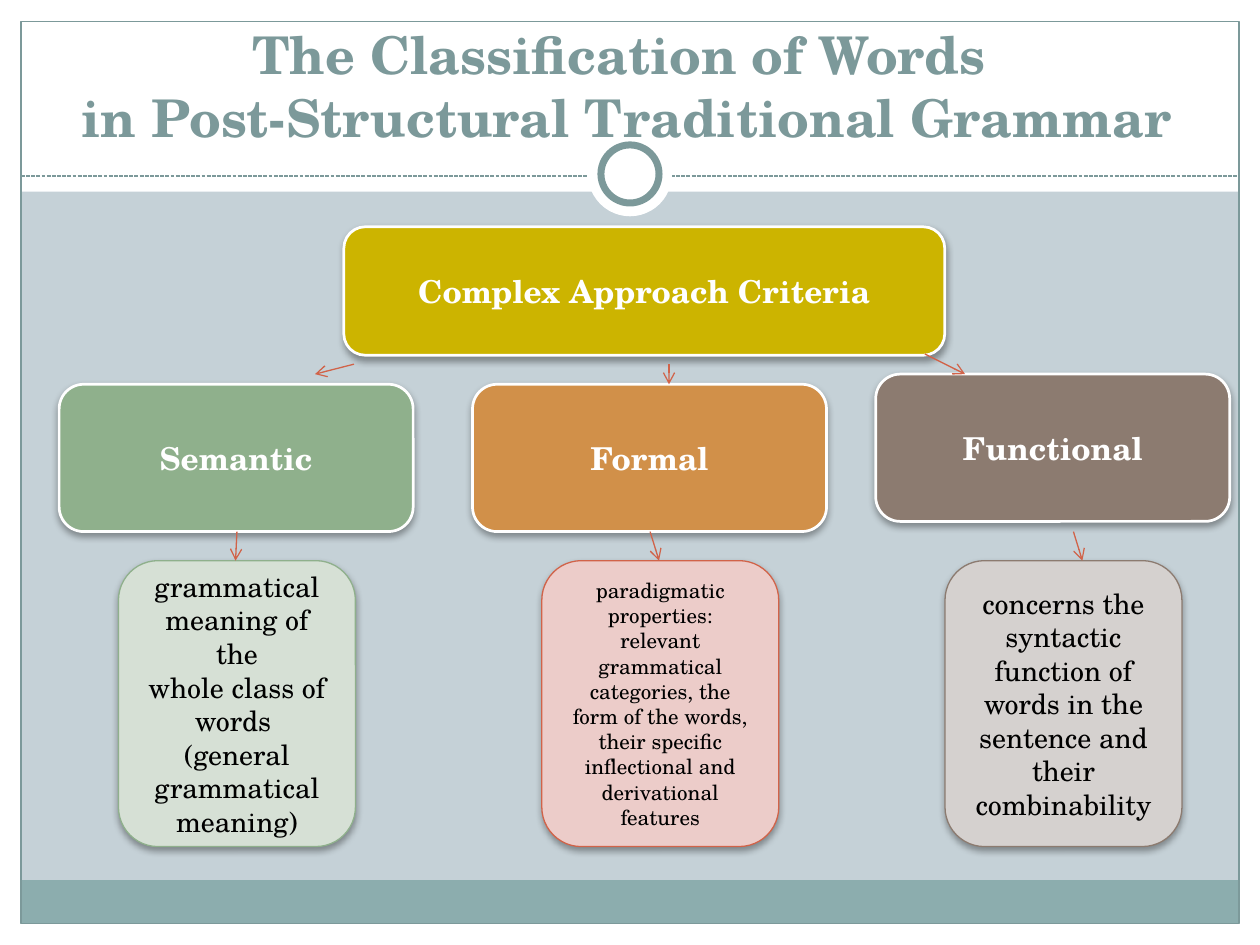
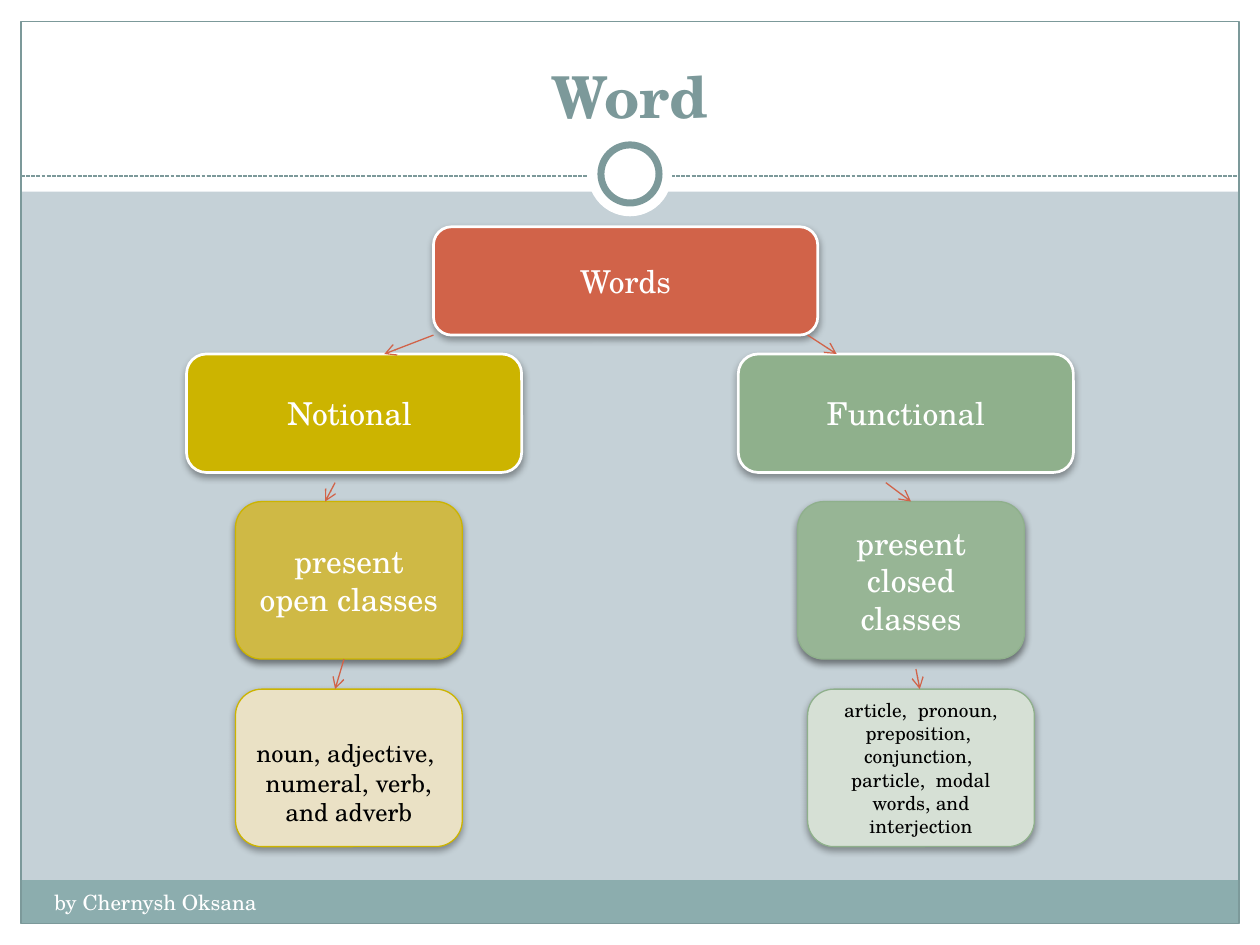
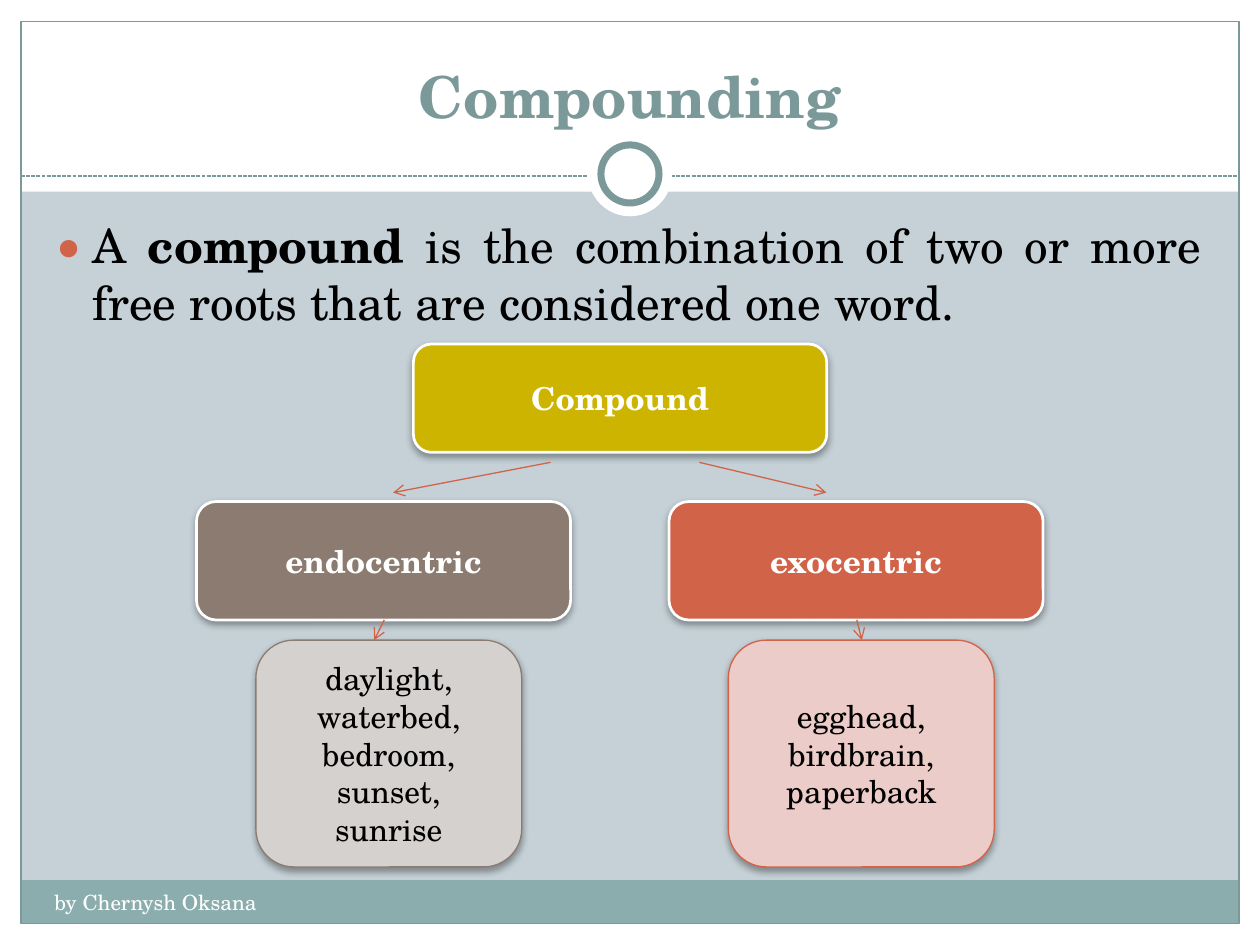
"""Build three slides that classify words and compounds in tree diagrams."""
import lxml.etree
import pptx
import pptx.dml.color
import pptx.enum.dml
import pptx.enum.shapes
import pptx.enum.text
import pptx.oxml.ns
import pptx.util

Pt = pptx.util.Pt
qn = pptx.oxml.ns.qn
SubElement = lxml.etree.SubElement
SHAPE = pptx.enum.shapes.MSO_SHAPE
ALIGN = pptx.enum.text.PP_ALIGN
ANCHOR = pptx.enum.text.MSO_ANCHOR

FONT = "TeX Gyre Schola"
WHITE, BLACK = "FFFFFF", "000000"
TEAL, FOOTER_TEAL, BACKGROUND, ACCENT = "7C999A", "8CADAE", "C5D1D7", "D16349"
FILLS = {
    "heading": {"gold": "CCB400", "green": "8FB08C", "orange": "D19049",
                "brown": "8C7B70", "red": ACCENT},
    "class": {"gold": "CFB945", "green": "97B595"},
    "note": {"gold": "EAE1C5", "green": "D6E0D5", "brown": "D5D1CF", "red": "ECCCC9"},
}

SLIDES = [
    {
        "title": "The Classification of Words \vin Post-Structural Traditional Grammar",
        "title_place": (22.3, 28.1), "title_size": 29.7, "bold_headings": True,
        "tiers": [
            ("heading", 129.6, 343.4, 73.4, [
                (196.5, "gold", 18, "Complex Approach Criteria")]),
            ("heading", 219.6, 202.3, 84.2, [
                (33.8, "green", 18, "Semantic"),
                (270, "orange", 18, "Formal")]),
            ("heading", 213.8, 202.3, 84.2, [
                (500.4, "brown", 18, "Functional")]),
            ("note", 320.4, 135.4, 163.4, [
                (67.7, "green", 16, "grammatical meaning of the\nwhole class of words \n"
                                    "(general grammatical meaning)"),
                (309.6, "red", 12, "paradigmatic properties: relevant grammatical categories, "
                                   "the form of the words,\n"
                                   "their specific inflectional and derivational features"),
                (540, "brown", 16, "concerns the syntactic function of words in the sentence "
                                   "and their combinability")]),
        ],
        "arrows": [(202.3, 208.1, 180, 213.8), (528.5, 202.3, 551.5, 213.8),
                   (382.3, 208.1, 382.3, 219.6), (135.4, 303.8, 134.6, 320.4),
                   (371.5, 303.8, 376.6, 320.4), (613.4, 303.8, 618.5, 320.4)],
    },
    {
        "title": "Word", "title_place": (24, 18), "title_size": 33, "bold_headings": False,
        "footer": "by Chernysh Oksana",
        "tiers": [
            ("heading", 129.6, 219.6, 61.9, [(247.7, "red", 18, "Words")]),
            ("heading", 202.3, 191.5, 67.7, [
                (106.6, "gold", 18, "Notional "),
                (421.9, "green", 18, "Functional")]),
            ("class", 286.6, 129.6, 90, [
                (134.6, "gold", 18, "present\nopen classes"),
                (455.8, "green", 18, "present closed classes")]),
            ("note", 393.8, 129.6, 90, [
                (461.5, "green", 11, "article,  pronoun, preposition,  conjunction, \n"
                                     "particle,  modal words, and interjection"),
                (134.6, "gold", 14, "noun, adjective,  numeral, verb, and adverb")]),
        ],
        "arrows": [(247.7, 191.5, 219.6, 202.3), (461.5, 191.5, 478.1, 202.3),
                   (191.5, 275.8, 185.8, 286.6), (506.2, 275.8, 520.6, 286.6),
                   (196.6, 376.6, 191.5, 393.8), (523.4, 382.3, 525.6, 393.8)],
    },
    {
        "title": "Compounding", "title_place": (24, 18), "title_size": 33, "bold_headings": True,
        "footer": "by Chernysh Oksana",
        "definition": ["A ", "compound",
                       " is the combination of two or more free roots that are considered one word."],
        "tiers": [
            ("heading", 196.6, 236.2, 61.9, [(236.2, "gold", 18, "Compound")]),
            ("heading", 286.6, 213.8, 67.7, [
                (112.3, "brown", 18, "endocentric"),
                (382.3, "red", 18, "exocentric")]),
            ("note", 365.8, 151.9, 129.6, [
                (146.2, "brown", 18, "daylight, waterbed, bedroom, sunset, sunrise"),
                (416.2, "red", 18, "egghead, birdbrain, paperback")]),
        ],
        "arrows": [(314.6, 264.2, 224.6, 281.5), (399.6, 264.2, 472.3, 281.5),
                   (219.6, 354.2, 213.8, 365.8), (489.6, 354.2, 492.5, 365.8)],
    },
]


def paint(fill, color):
    """Make a fill of a shape, line or font solid in a hex colour."""
    fill.solid()
    fill.fore_color.rgb = pptx.dml.color.RGBColor.from_string(color)


def add_line(slide, ends, color):
    """Add a thin straight connector without a shadow."""
    connector = slide.shapes.add_connector(
        pptx.enum.shapes.MSO_CONNECTOR.STRAIGHT, *[Pt(value) for value in ends])
    paint(connector.line.fill, color)
    connector.line.width = Pt(0.75)
    SubElement(connector._element.spPr, qn("a:effectLst"))
    return connector


presentation = pptx.Presentation()
presentation.slide_width, presentation.slide_height = Pt(720), Pt(540)
master = presentation.slide_master
paint(master.background.fill, BACKGROUND)
title_only, title_and_content = presentation.slide_layouts[5], presentation.slide_layouts[1]

for number, content in enumerate(SLIDES):
    layout = title_and_content if "definition" in content else title_only
    slide = presentation.slides.add_slide(layout)

    if number == 0:
        decorations = []
        for kind, left, top, width, height, fill, line_width in [
            (SHAPE.RECTANGLE, 0, 528, 720, 12, WHITE, 0),
            (SHAPE.RECTANGLE, 0, 0, 720, 109.5, WHITE, 0),
            (SHAPE.RECTANGLE, 0, 0, 12, 540, WHITE, 0),
            (SHAPE.RECTANGLE, 708, 0, 12, 540, WHITE, 0),
            (SHAPE.RECTANGLE, 11.7, 503, 696, 24.5, FOOTER_TEAL, 0),
            (SHAPE.RECTANGLE, 12, 12.2, 696, 515.5, None, 0.75),
            (None, 12, 100.6, 708, 100.6, TEAL, 0.75),
            (SHAPE.OVAL, 336, 75.6, 48, 48, WHITE, 0),
            (SHAPE.OVAL, 343.4, 82.8, 33.2, 33.2, WHITE, 4),
        ]:
            if kind is None:
                shape = add_line(slide, (left, top, width, height), fill)
                shape.line.dash_style = pptx.enum.dml.MSO_LINE.SQUARE_DOT
            else:
                shape = slide.shapes.add_shape(kind, Pt(left), Pt(top), Pt(width), Pt(height))
                shape.shadow.inherit = False
                if fill:
                    paint(shape.fill, fill)
                else:
                    shape.fill.background()
                if line_width:
                    paint(shape.line.fill, TEAL)
                    shape.line.width = Pt(line_width)
                else:
                    shape.line.fill.background()
            decorations.append(shape)
        for shape in decorations:
            master.shapes._spTree.append(shape._element)

    title = slide.shapes.title
    title.left, title.top = [Pt(value) for value in content["title_place"]]
    title.width, title.height = Pt(672), Pt(59.8)
    title.text_frame.text = content["title"]
    title.text_frame.auto_size = pptx.enum.text.MSO_AUTO_SIZE.NONE
    title.text_frame.vertical_anchor = ANCHOR.BOTTOM
    paragraph = title.text_frame.paragraphs[0]
    paragraph.alignment = ALIGN.CENTER
    for run in paragraph.runs:
        run.font.name, run.font.size, run.font.bold = FONT, Pt(content["title_size"]), True
        paint(run.font.fill, TEAL)

    if "footer" in content:
        footer = slide.shapes.add_textbox(Pt(24), Pt(504.7), Pt(282), Pt(28.8))
        footer.text_frame.word_wrap = True
        footer.text_frame.text = content["footer"]
        font = footer.text_frame.paragraphs[0].runs[0].font
        font.name, font.size = FONT, Pt(12)
        paint(font.fill, WHITE)

    if "definition" in content:
        body = slide.placeholders[1]
        body.left, body.top, body.width, body.height = Pt(24), Pt(120), Pt(669.6), Pt(360)
        body.text_frame.auto_size = pptx.enum.text.MSO_AUTO_SIZE.NONE
        paragraph = body.text_frame.paragraphs[0]
        paragraph.alignment = ALIGN.JUSTIFY
        for text in content["definition"]:
            run = paragraph.add_run()
            run.text = text
            run.font.name, run.font.size = FONT, Pt(27)
            run.font.bold = text == "compound"
            paint(run.font.fill, BLACK)
        properties = paragraph._p.get_or_add_pPr()
        properties.set("marL", str(Pt(21.6)))
        properties.set("indent", str(-Pt(21.6)))
        bullet_color = SubElement(properties, qn("a:buClr"))
        SubElement(bullet_color, qn("a:srgbClr"), val=ACCENT)
        SubElement(properties, qn("a:buSzPct"), val="85000")
        SubElement(properties, qn("a:buFont"), typeface=FONT)
        SubElement(properties, qn("a:buChar"), char="●")

    for kind, top, width, height, boxes in content["tiers"]:
        is_heading = kind == "heading"
        for left, hue, size, text in boxes:
            box = slide.shapes.add_shape(
                SHAPE.ROUNDED_RECTANGLE, Pt(left), Pt(top), Pt(width), Pt(height))
            paint(box.fill, FILLS[kind][hue])
            paint(box.line.fill, WHITE if is_heading else FILLS["heading"][hue])
            box.line.width = Pt(1.57 if is_heading else 0.75)
            box.shadow.inherit = False
            shadow = SubElement(
                box._element.spPr.find(qn("a:effectLst")), qn("a:outerShdw"),
                blurRad=str(Pt(4)), dist=str(Pt(2)), dir="5400000", rotWithShape="0")
            shadow_color = SubElement(shadow, qn("a:srgbClr"), val=BLACK)
            SubElement(shadow_color, qn("a:alpha"), val="45000" if kind == "class" else "35000")

            box.text_frame.word_wrap = True
            box.text_frame.vertical_anchor = ANCHOR.MIDDLE
            box.text_frame.text = text
            if text.startswith("noun"):
                box.text_frame.margin_top = Pt(20.4)
            for paragraph in box.text_frame.paragraphs:
                paragraph.alignment = ALIGN.CENTER
                font = paragraph.runs[0].font
                font.name, font.size = FONT, Pt(size)
                font.bold = is_heading and content["bold_headings"]
                paint(font.fill, BLACK if kind == "note" else WHITE)

    for ends in content["arrows"]:
        arrow = add_line(slide, ends, ACCENT)
        SubElement(arrow._element.spPr.find(qn("a:ln")), qn("a:tailEnd"), type="arrow")

presentation.save("out.pptx")
